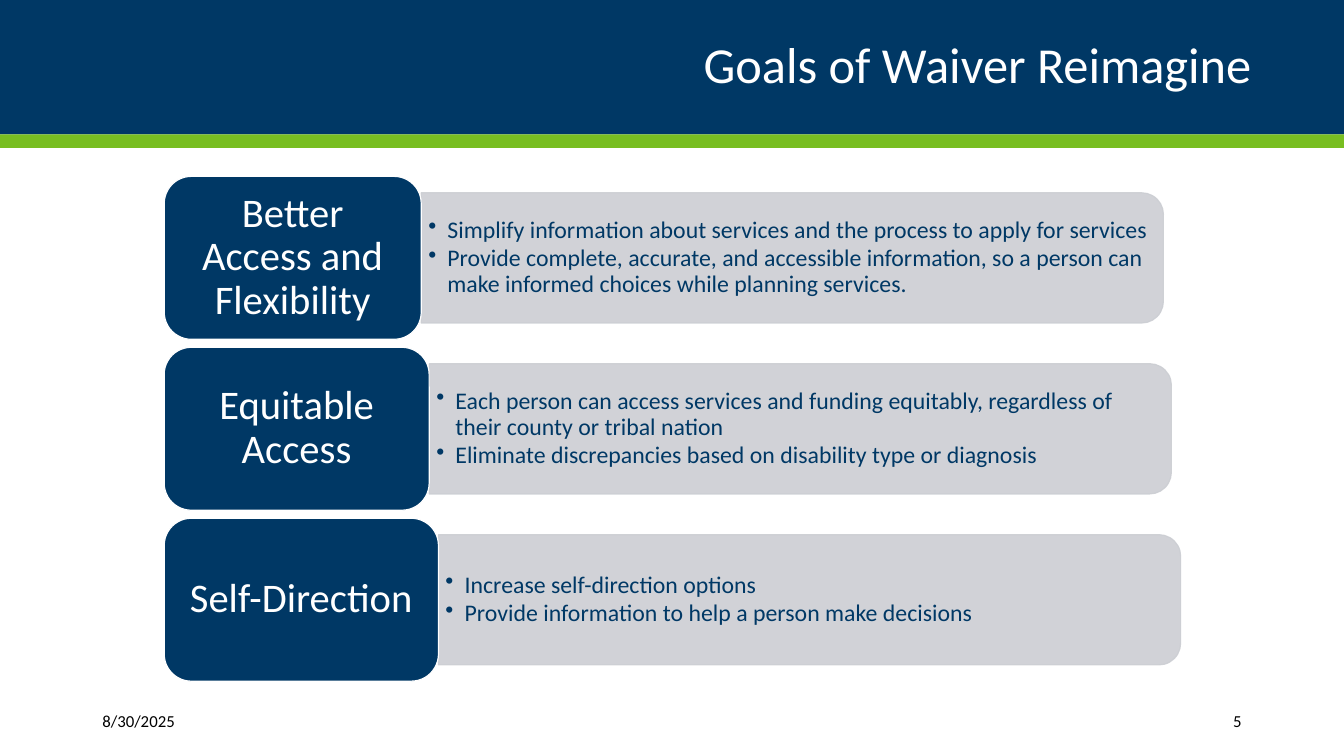
import pptx
import pptx.dml.color
import pptx.enum.shapes
import pptx.enum.text
import pptx.oxml
import pptx.oxml.ns
import pptx.util

SHAPE = pptx.enum.shapes.MSO_SHAPE
ALIGN = pptx.enum.text.PP_ALIGN
ANCHOR = pptx.enum.text.MSO_ANCHOR
Inches, Pt = pptx.util.Inches, pptx.util.Pt

NAVY, GREEN, GRAY, WHITE, BLACK = "003865", "78BE21", "CCCED3", "FFFFFF", "000000"
COLS, ROWS = 160, 90
UNIT = 7.5 / ROWS

GOALS = [
    ("Better Access and Flexibility", 30.6, [
        "Simplify information about services and the process to apply for services",
        "Provide complete, accurate, and accessible information, so a person can "
        "make informed choices while planning services.",
    ]),
    ("Equitable Access", 31.55, [
        "Each person can access services and funding equitably, regardless of "
        "their county or tribal nation",
        "Eliminate discrepancies based on disability type or diagnosis",
    ]),
    ("Self-Direction", 32.65, [
        "Increase self-direction options",
        "Provide information to help a person make decisions",
    ]),
]
LABEL_LEFT, LABEL_TOP, LABEL_HEIGHT, PITCH = 19.55, 21, 19.4, 20.35
PANEL_LENGTH, PANEL_DEPTH = 88.35, 15.5
BULLETS_WIDTH, BULLETS_HEIGHT = 87.6, 14.05


def rgb(color):
    return pptx.dml.color.RGBColor.from_string(color)


def grid(*cells):
    """Turn grid columns and rows into slide lengths."""
    return [Inches(cell * UNIT) for cell in cells]


def set_alpha(sp, percent):
    """Make the fill and the line of a shape partly transparent."""
    for color in sp.element.spPr.iter(pptx.oxml.ns.qn("a:srgbClr")):
        color.append(pptx.oxml.parse_xml(
            f'<a:alpha {pptx.oxml.ns.nsdecls("a")} val="{percent * 1000}"/>'))


def add_bullet(p, hang):
    pPr = p._p.get_or_add_pPr()
    pPr.set("marL", str(Inches(hang)))
    pPr.set("indent", str(-Inches(hang)))
    pPr.append(pptx.oxml.parse_xml(
        f'<a:buChar {pptx.oxml.ns.nsdecls("a")} char="•"/>'))


def write(tf, *texts, size, color, align=ALIGN.LEFT, inset=(0.1, 0.05),
          spacing=0.9, after=0, bullet=False):
    """Fill a text frame, one paragraph for each text."""
    tf.word_wrap = True
    tf.auto_size = pptx.enum.text.MSO_AUTO_SIZE.NONE
    tf.vertical_anchor = ANCHOR.MIDDLE
    tf.margin_left = tf.margin_right = Inches(inset[0])
    tf.margin_top = tf.margin_bottom = Inches(inset[1])
    for i, text in enumerate(texts):
        p = tf.add_paragraph() if i else tf.paragraphs[0]
        p.alignment, p.line_spacing = align, spacing
        p.space_before, p.space_after = Pt(0), Pt(after)
        if bullet:
            add_bullet(p, 0.19)
        r = p.add_run()
        r.text = text
        r.font.name, r.font.size = "Calibri", Pt(size)
        r.font.color.rgb = rgb(color)


class Deck:
    def __init__(self):
        self.prs = pptx.Presentation()
        self.prs.slide_width, self.prs.slide_height = grid(COLS, ROWS)
        self.s = self.prs.slides.add_slide(self.prs.slide_layouts[5])

    def shape(self, kind, left, top, width, height, fill, line=None):
        sp = self.s.shapes.add_shape(kind, *grid(left, top, width, height))
        sp.shadow.inherit = False
        sp.fill.solid()
        sp.fill.fore_color.rgb = rgb(fill)
        if line:
            sp.line.color.rgb = rgb(line)
            sp.line.width = Pt(0.85)
        else:
            sp.line.fill.background()
        return sp

    def text(self, left, top, width, height, *texts, **style):
        sp = self.s.shapes.add_textbox(*grid(left, top, width, height))
        write(sp.text_frame, *texts, **style)

    def title(self, text):
        self.shape(SHAPE.RECTANGLE, 0, 0, COLS, 16, NAVY)
        self.shape(SHAPE.RECTANGLE, 0, 16, COLS, 1.6, GREEN)
        sp = self.s.shapes.title
        sp.left, sp.top, sp.width, sp.height = grid(11, 0, 138, 16)
        write(sp.text_frame, text, size=36, color=WHITE,
              align=ALIGN.RIGHT, inset=(0, 0.05))
        # Bring the title in front of the bars
        sp.element.getparent().append(sp.element)

    def goal(self, row, name, label_width, points):
        top = LABEL_TOP + row * PITCH
        middle = top + LABEL_HEIGHT / 2
        panel_left = LABEL_LEFT + label_width

        # The panel is an upright shape turned a quarter about its centre
        panel = self.shape(SHAPE.ROUND_2_SAME_RECTANGLE,
                           panel_left + (PANEL_LENGTH - PANEL_DEPTH) / 2,
                           middle - PANEL_LENGTH / 2,
                           PANEL_DEPTH, PANEL_LENGTH, GRAY, GRAY)
        panel.rotation = 90
        set_alpha(panel, 90)
        self.text(panel_left, middle - BULLETS_HEIGHT / 2,
                  BULLETS_WIDTH, BULLETS_HEIGHT, *points, size=17, color=NAVY,
                  inset=(0.07, 0.04), after=2, bullet=True)

        label = self.shape(SHAPE.ROUNDED_RECTANGLE, LABEL_LEFT, top,
                           label_width, LABEL_HEIGHT, NAVY, WHITE)
        write(label.text_frame, name, size=29, color=WHITE,
              align=ALIGN.CENTER, inset=(0.12, 0.06))

    def footer(self, date, number):
        style = dict(size=12, color=BLACK, spacing=1)
        self.text(11, 83.4, 17.9, 4.8, date, **style)
        self.text(129.8, 83.4, 19.2, 4.8, number, align=ALIGN.RIGHT, **style)


def main():
    deck = Deck()
    deck.title("Goals of Waiver Reimagine")
    for row, goal in enumerate(GOALS):
        deck.goal(row, *goal)
    deck.footer("8/30/2025", "5")
    deck.prs.save("out.pptx")


if __name__ == "__main__":
    main()
